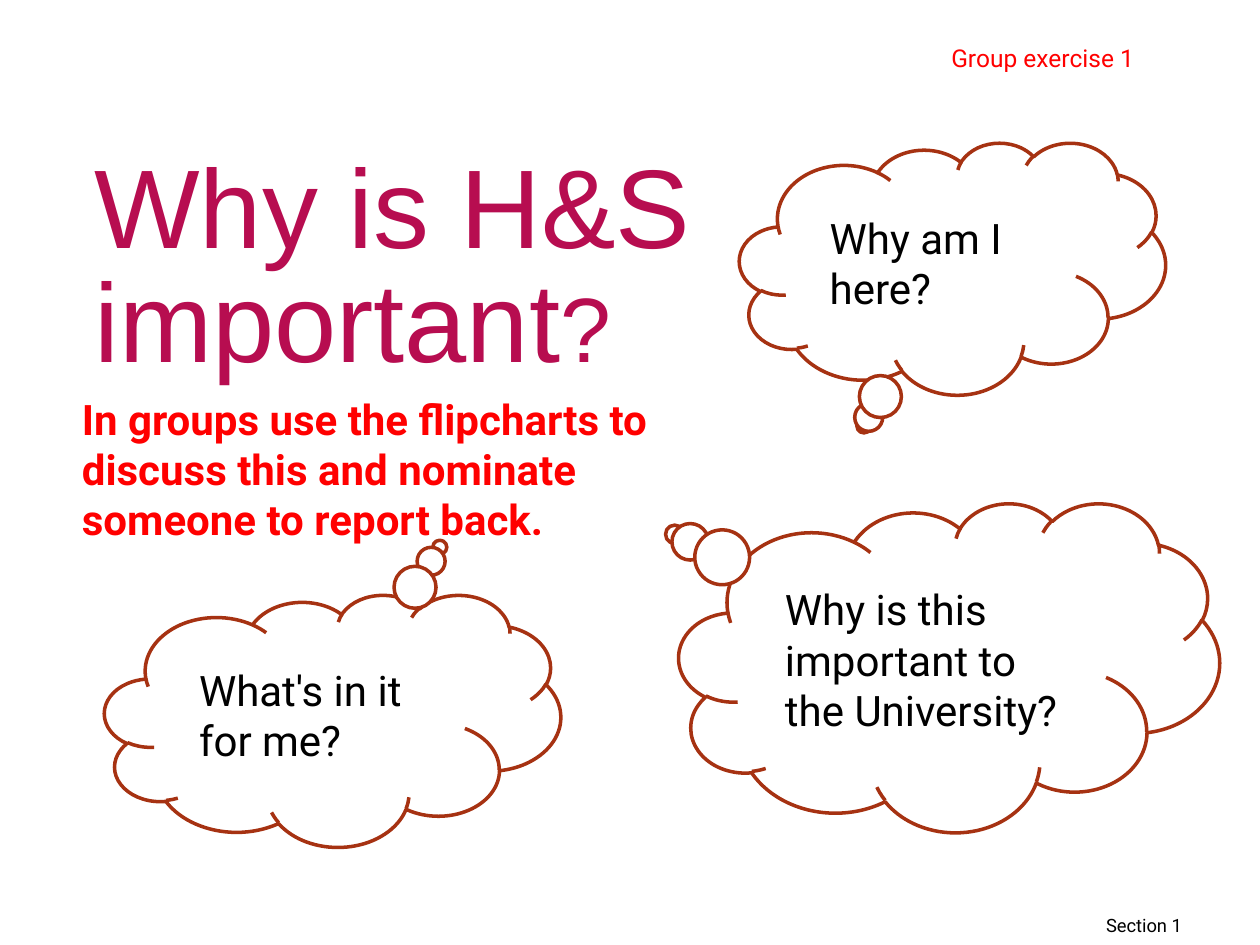
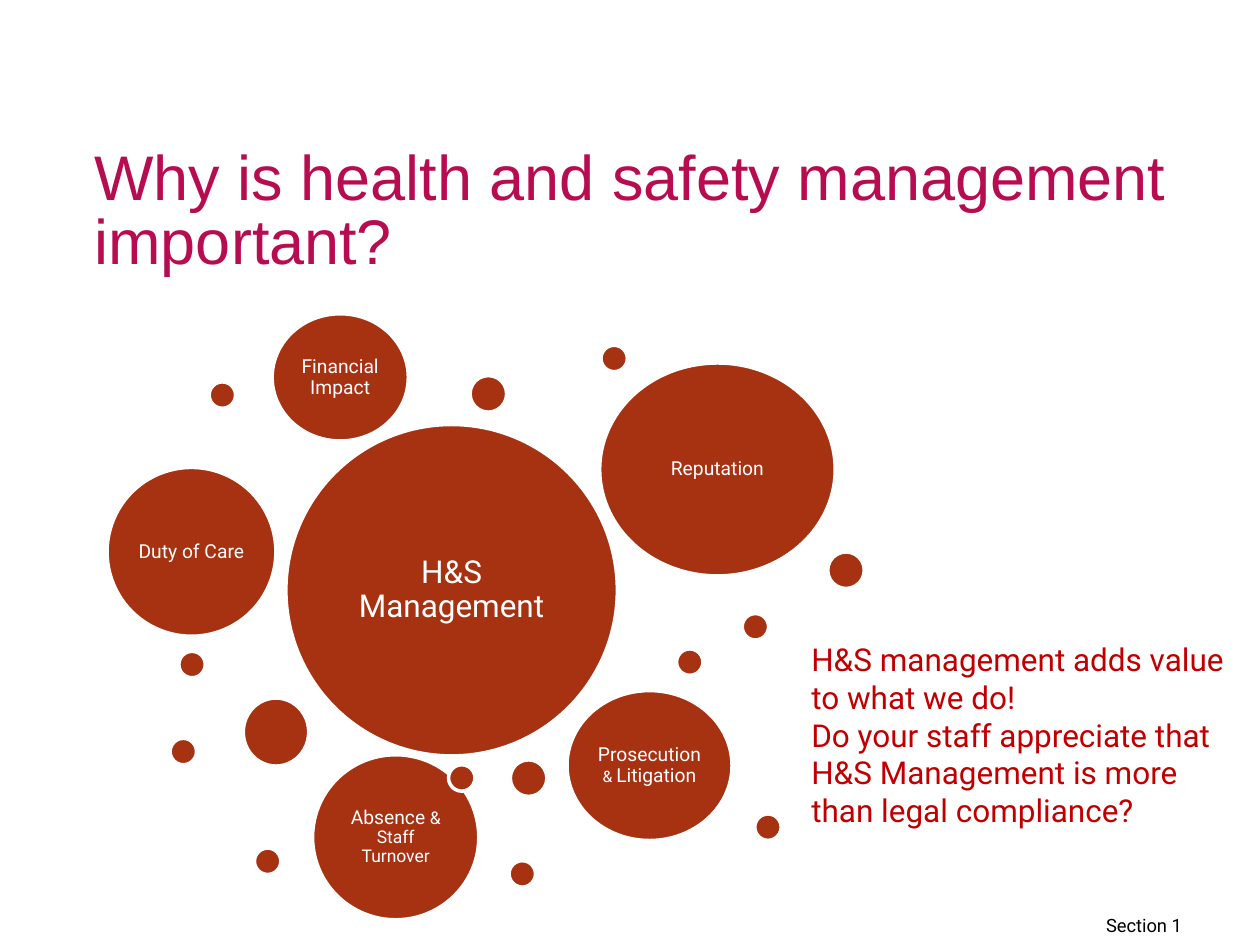
from pptx import Presentation
from pptx.dml.color import RGBColor
from pptx.enum.shapes import MSO_SHAPE
from pptx.enum.text import MSO_ANCHOR, MSO_AUTO_SIZE, PP_ALIGN
from pptx.util import Pt

COLORS = {
    "title": "B70D50",
    "rust": "A63212",
    "red": "FF0000",
    "dark_red": "C00000",
    "black": "000000",
    "white": "FFFFFF",
}
TITLE_FONT = "Arial"
BODY_FONT = "Roboto"


def write(shape, paragraphs, size, color, inset=3.6, font=BODY_FONT, bold=False,
          align=PP_ALIGN.LEFT, anchor=MSO_ANCHOR.TOP, line_spacing=None):
    """Fill a shape with paragraphs, each a list of (text, own size or None)."""
    frame = shape.text_frame
    frame.word_wrap = True
    frame.auto_size = MSO_AUTO_SIZE.NONE
    frame.vertical_anchor = anchor
    frame.margin_left = frame.margin_right = Pt(inset)
    frame.margin_top = frame.margin_bottom = Pt(inset)
    for index, runs in enumerate(paragraphs):
        paragraph = frame.paragraphs[0] if index == 0 else frame.add_paragraph()
        paragraph.alignment = align
        paragraph.line_spacing = line_spacing
        paragraph.font.name = font
        paragraph.font.size = Pt(size)
        paragraph.font.bold = bold
        paragraph.font.color.rgb = RGBColor.from_string(COLORS[color])
        for text, own_size in runs:
            run = paragraph.add_run()
            run.text = text
            if own_size:
                run.font.size = Pt(own_size)


def add_outlined(slide, kind, box, fill, line):
    """Add a preset shape with a 2 pt line and no shadow."""
    shape = slide.shapes.add_shape(kind, *map(Pt, box))
    shape.shadow.inherit = False
    shape.fill.solid()
    shape.fill.fore_color.rgb = RGBColor.from_string(COLORS[fill])
    shape.line.color.rgb = RGBColor.from_string(COLORS[line])
    shape.line.width = Pt(2)
    return shape


presentation = Presentation()
presentation.slide_width = Pt(720)
presentation.slide_height = Pt(540)
title_only = presentation.slide_layouts[5]

# Titles and section labels of both slides
titles = [
    ((54, 90, 612, 127.5), 63.9, [("Why is H&S important", None), ("?", 52.2)]),
    ((54, 85, 629.3, 78.5), 36,
     [("Why is health and safety management important?", None)]),
]
slides = []
for box, size, runs in titles:
    slide = presentation.slides.add_slide(title_only)
    title = slide.shapes.title
    title.left, title.top, title.width, title.height = map(Pt, box)
    write(title, [runs], size, "title", inset=0, font=TITLE_FONT, line_spacing=0.85)
    section = slide.shapes.add_textbox(Pt(628.5), Pt(519), Pt(91.5), Pt(21))
    write(section, [[("Section 1", None)]], 10.5, "black")
    slides.append(slide)
exercise_slide, bubble_slide = slides

# Slide 1: exercise label and instruction
exercise = exercise_slide.shapes.add_textbox(Pt(540), Pt(21), Pt(120), Pt(24.5))
write(exercise, [[("Group exercise 1", None)]], 14, "red")

instruction = exercise_slide.shapes.add_textbox(Pt(46.8), Pt(224.6), Pt(341.3), Pt(87))
write(instruction, [[("In groups use the flipcharts to discuss this and nominate "
                      "someone to report back.", None)]],
      24, "red", inset=0, bold=True)

# Slide 1: thought clouds, each with its tail offset
clouds = [
    ((422.6, 81.4, 243.4, 144), (-0.208, 0.625), "Why am I here?"),
    ((388, 287.3, 308.9, 188), (-0.508, -0.404),
     "Why is this important to the University?"),
    ((59.8, 339.8, 260.6, 144), (0.235, -0.688), "What's in it for me?"),
]
for box, tail, question in clouds:
    cloud = add_outlined(exercise_slide, MSO_SHAPE.CLOUD_CALLOUT, box, "white", "rust")
    cloud.adjustments[0], cloud.adjustments[1] = tail
    write(cloud, [[(question, None)]], 24, "black", inset=18, anchor=MSO_ANCHOR.MIDDLE)

# Slide 2: labelled bubbles
bubbles = [
    ((163.4, 242.6, 189.4, 189.4), 18, 5,
     [("H&S", None), (" ", 14), ("Management", None)]),
    ((61.2, 267.1, 96.5, 96.5), 11, 3.6, [("Duty of Care", None)]),
    ((155.5, 179.3, 77.8, 72.7), 11, 3.6, [("Financial Impact", None)]),
    ((324, 394.6, 94.3, 85.7), 11, 3.6,
     [("Prosecution", None), (" & ", 9), ("Litigation", None)]),
    ((178.6, 431.3, 95, 94.3), 11, 3.6,
     [("Absence", None), (" & Staff Turnover", 10)]),
    ((342.7, 207.4, 134.6, 121.7), 11, 3.6, [("Reputation", None)]),
]
for box, size, inset, runs in bubbles:
    bubble = add_outlined(bubble_slide, MSO_SHAPE.OVAL, box, "rust", "white")
    write(bubble, [runs], size, "white", inset=inset, align=PP_ALIGN.CENTER,
          anchor=MSO_ANCHOR.MIDDLE, line_spacing=0.9)

# Slide 2: plain dots, grouped by width and height
dots = {
    (15.1, 15.1): [(145.4, 484.6), (424.1, 350.6), (431.3, 465.1), (102.2, 372.2),
                   (97.2, 421.9), (290.9, 491.8), (386.6, 370.8), (256.3, 437),
                   (119.5, 218.2), (343.4, 197.3)],
    (20.9, 20.9): [(291.6, 434.2), (268.6, 214.6), (473, 315.4)],
    (37.4, 38.9): [(139, 398.9)],
}
for dot_size, positions in dots.items():
    for position in positions:
        add_outlined(bubble_slide, MSO_SHAPE.OVAL, position + dot_size, "rust", "white")

# Slide 2: closing message
message = bubble_slide.shapes.add_textbox(Pt(460), Pt(362.2), Pt(246.3), Pt(139))
message_lines = [
    "H&S management adds value",
    "to what we do!",
    "Do your staff appreciate that H&S Management is more than legal compliance?",
]
write(message, [[(line, None)] for line in message_lines], 18, "dark_red")

presentation.save("out.pptx")
